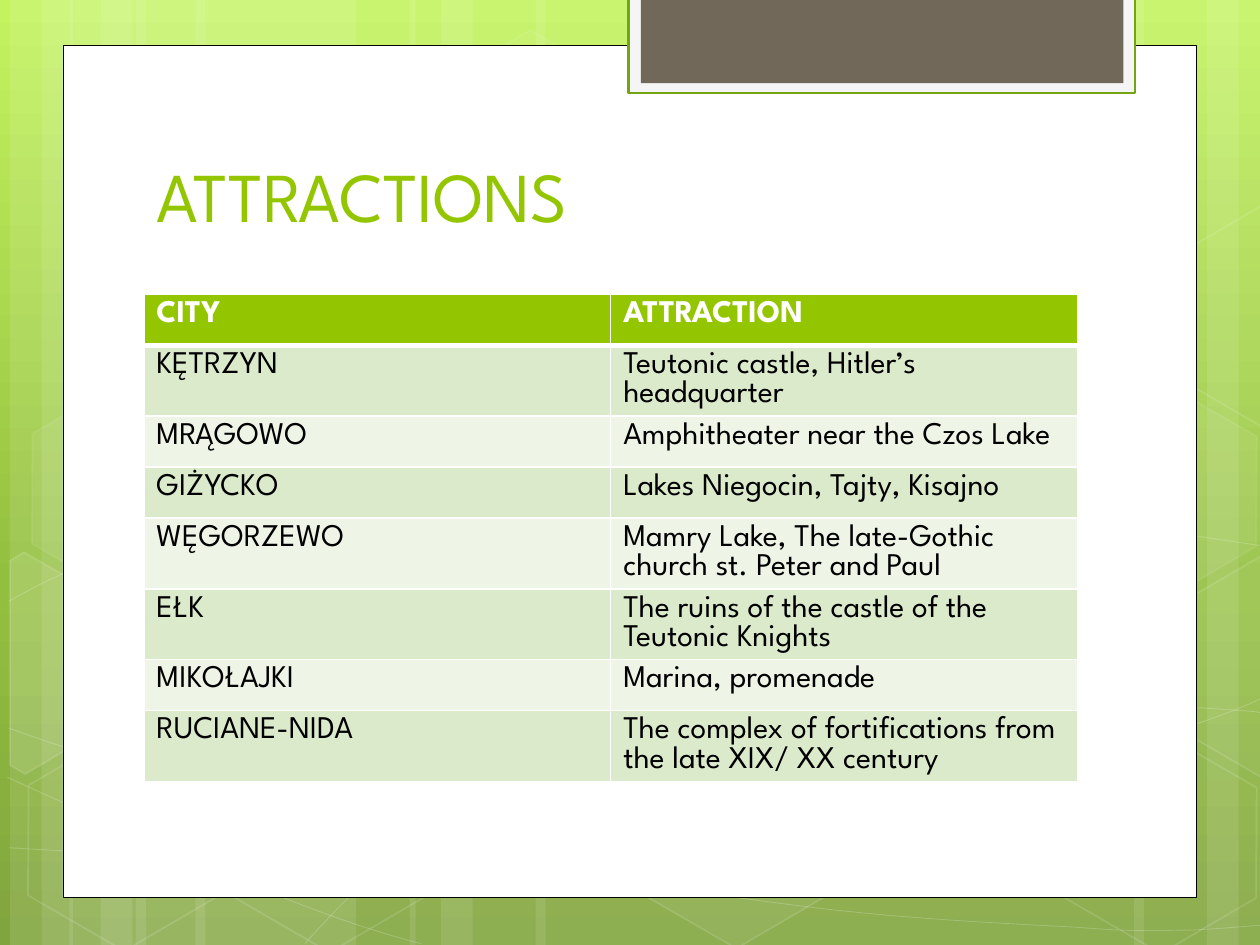
from copy import deepcopy
from math import cos, radians, sin
from typing import NamedTuple

from pptx import Presentation
from pptx.dml.color import RGBColor as RGB
from pptx.enum.shapes import MSO_SHAPE as Shape
from pptx.enum.text import MSO_ANCHOR as Anchor, MSO_AUTO_SIZE as Fit, PP_ALIGN as Align
from pptx.oxml.ns import qn
from pptx.util import Cm, Pt

FONT = "League Spartan"
WHITE, BLACK, GREEN = "FFFFFF", "000000", "94C600"
TILT = 30


class Curve(NamedTuple):
    """A start, then three points for each Bezier piece; one piece may be a line."""
    knots: list
    straight: int = -1


class Hex(NamedTuple):
    x: float
    y: float
    fill: int
    line: int


class Shard(NamedTuple):
    """A tilted hexagon cut off by the slide edge."""
    mid: tuple
    points: list
    fill: int


# Left and width of the pale stripes, in cm
STRIPES = [(2.74, 4.44), (0.2, 1.27), (0.84, 2.11), (3.94, 4.44), (1.4, 1.27), (2.03, 2.11),
           (18.62, 4.44), (24.33, 1.27), (22.86, 2.11),
           (10.8, 7.82), (8.26, 1.27), (8.89, 2.11)]

CURVES = [
    Curve([(0.18, 17.09), (1.55, 17.17), (2.92, 17.25), (4.83, 17.22),
           (6.73, 17.2), (9.09, 17.15), (11.63, 16.89), (14.17, 16.64), (17.78, 16.15),
           (20.12, 15.67), (22.43, 15.19), (24.82, 14.43), (25.58, 14)]),
    Curve([(0.18, 12.12), (0.91, 11.71), (1.65, 11.33), (3.07, 10.95),
           (4.52, 10.57), (6.58, 10.01), (8.81, 9.83), (11.07, 9.65), (13.82, 9.63),
           (16.61, 9.83), (19.41, 10.03), (24.05, 10.82), (25.58, 11.02)]),
    Curve([(0.15, 15.67), (3.23, 17.07), (6.27, 18.47), (8.48, 19.02)]),
    Curve([(0.18, 14.68), (0.97, 14.96), (1.78, 15.24), (3.25, 15.65),
           (4.72, 16.03), (6.93, 16.66), (9.07, 17.09), (11.18, 17.53), (13.84, 17.98),
           (15.95, 18.24), (18.06, 18.52), (20.32, 18.62), (21.67, 18.69), (22.99, 18.8),
           (23.34, 18.75), (24, 18.75), (24.66, 18.72), (25.12, 18.67), (25.58, 18.64)]),
    Curve([(6.15, 19.02), (6.6, 18.52), (7.06, 18.01), (7.67, 17.55),
           (8.28, 17.09), (9.14, 16.59), (9.86, 16.23), (10.57, 15.88), (11, 15.72),
           (11.94, 15.47), (12.85, 15.21), (14.55, 14.86), (15.44, 14.68), (16.36, 14.5),
           (16.48, 14.5), (17.27, 14.45), (18.06, 14.38), (19.3, 14.3), (20.17, 14.27),
           (21.06, 14.25), (22.5, 14.27), (22.5, 14.27), (24.21, 14.27),
           (24.66, 14.3), (25.1, 14.33), (25.32, 14.35), (25.48, 14.38), (25.4, 14.35),
           (25.55, 14.38)], straight=7),
]

HEXES = [Hex(8.48, 0.91, 4, 8), Hex(12.62, 14.96, 6, 12), Hex(0.28, 15.01, 0, 12),
         Hex(0.36, 7.92, 7, 8), Hex(4.42, 15.04, 0, 12), Hex(19.13, 11.51, 10, 12),
         Hex(21.18, 15.06, 0, 12), Hex(21.18, 7.98, 7, 8)]

SHARDS = [
    Shard((0.91, 13.59), [(0.2, 11.3), (0.48, 11.13), (2.44, 12.24), (2.41, 14.48),
                          (0.51, 15.6), (0.2, 15.42)], 10),
    Shard((25.02, 13.21), [(23.52, 12.32), (25.43, 11.2), (25.63, 11.33), (25.63, 15.57),
                           (25.45, 15.67), (23.52, 14.55)], 4),
    Shard((25.02, 6.12), [(23.52, 5.26), (25.43, 4.14), (25.65, 4.27), (25.63, 8.51),
                          (25.45, 8.61), (23.52, 7.49)], 0),
]

ROWS = [
    ("CITY", "ATTRACTION"),
    ("KĘTRZYN", "Teutonic castle, Hitler’s headquarter"),
    ("MRĄGOWO", "Amphitheater near the Czos Lake"),
    ("GIŻYCKO", "Lakes Niegocin, Tajty, Kisajno"),
    ("WĘGORZEWO", "Mamry Lake, The late-Gothic church st. Peter and Paul"),
    ("EŁK", "The ruins of the castle of the Teutonic Knights"),
    ("MIKOŁAJKI", "Marina, promenade"),
    ("RUCIANE-NIDA", "The complex of fortifications from the late XIX/ XX century"),
]


def paint(fill, color: str, alpha: int = 100) -> None:
    """Fill with a colour; alpha is in percent and 0 means no fill."""
    if not alpha:
        fill.background()
        return
    fill.solid()
    fill.fore_color.rgb = RGB.from_string(color)
    if alpha < 100:
        tone = fill._xPr.find(qn("a:solidFill"))[0]
        tone.append(tone.makeelement(qn("a:alpha"), {"val": str(alpha * 1000)}))


def style(shape, fill=WHITE, alpha=100, line=WHITE, width=0.0, glow=100) -> None:
    """Set fill and outline; glow is the opacity of the line."""
    shape.shadow.inherit = False
    paint(shape.fill, fill, alpha)
    paint(shape.line.fill, line, glow if width else 0)
    if width:
        shape.line.width = Pt(width)


def add_box(slide, x, y, w, h, kind=Shape.RECTANGLE, **look):
    box = slide.shapes.add_shape(kind, Cm(x), Cm(y), Cm(w), Cm(h))
    style(box, **look)
    return box


def add_path(slide, points: list, close: bool, **look):
    spots = [(Cm(x), Cm(y)) for x, y in points]
    pen = slide.shapes.build_freeform(*spots[0])
    pen.add_line_segments(spots[1:], close=close)
    shape = pen.convert_to_shape()
    style(shape, **look)
    return shape


def add_curve(slide, curve: Curve) -> None:
    shape = add_path(slide, curve.knots, False, alpha=0, width=0.5, glow=20)
    legs = list(shape._element.iter(qn("a:lnTo")))
    piece = 0
    while legs:
        size = 1 if piece == curve.straight else 3
        group, legs = legs[:size], legs[size:]
        if size == 3:
            bend = group[0].makeelement(qn("a:cubicBezTo"))
            group[0].addprevious(bend)
            for leg in group:
                bend.append(leg[0])
                leg.getparent().remove(leg)
        piece += 1


def add_shard(slide, shard: Shard) -> None:
    """Turn the points back about the middle, then tilt the shape."""
    turn, (mx, my) = radians(-TILT), shard.mid
    flat = [(mx + (x - mx) * cos(turn) - (y - my) * sin(turn),
             my + (x - mx) * sin(turn) + (y - my) * cos(turn)) for x, y in shard.points]
    add_path(slide, flat, True, alpha=shard.fill, width=1, glow=12).rotation = TILT


def write(frame, text: str, size=18, color=BLACK, bold=False) -> None:
    frame.text = text
    para = frame.paragraphs[0]
    para.alignment = Align.LEFT
    font = para.runs[0].font
    font.name, font.size, font.bold = FONT, Pt(size), bold
    font.color.rgb = RGB.from_string(color)


def edge(cell, side: str, width: float) -> None:
    """Draw a white border on one side: L, R, T or B."""
    props = cell._tc.get_or_add_tcPr()
    line = props.makeelement(qn(f"a:ln{side}"), {"w": str(Pt(width))})
    solid = line.makeelement(qn("a:solidFill"))
    solid.append(solid.makeelement(qn("a:srgbClr"), {"val": WHITE}))
    line.append(solid)
    props.insert("LRTB".index(side), line)


def add_grid(slide) -> None:
    height = 1.03
    grid = slide.shapes.add_table(len(ROWS), 2, Cm(2.9), Cm(5.93), Cm(18.82),
                                  Cm(height * len(ROWS))).table
    for r, row in enumerate(ROWS):
        grid.rows[r].height = Cm(height)
        head = r == 0
        for c, text in enumerate(row):
            cell = grid.cell(r, c)
            write(cell.text_frame, text, color=WHITE if head else BLACK, bold=head)
            paint(cell.fill, GREEN if head else ("EEF5E7", "DCEACC")[r % 2])
            for side in "LRTB":
                thick = (r, side) in ((0, "B"), (1, "T"))
                edge(cell, side, 3 if thick else 1)


def add_back(slide) -> None:
    fill = slide.background.fill
    fill.gradient()
    fill.gradient_angle = 270
    stops = slide._element.find(".//" + qn("a:gsLst"))
    stops.append(deepcopy(stops[0]))
    tones = [(0, "C3F35F"), (0.62, "93BF3F"), (1, "81A53E")]
    for stop, (place, color) in zip(fill.gradient_stops, tones):
        stop.position = place
        stop.color.rgb = RGB.from_string(color)
    for x, w in STRIPES:
        add_box(slide, x, 0, w, 19.05, alpha=10)
    for curve in CURVES:
        add_curve(slide, curve)
    for x, y, tint, line in HEXES:
        tile = add_box(slide, x, y, 4.44, 3.86, Shape.HEXAGON, alpha=tint, width=1, glow=line)
        tile.adjustments[0], tile.adjustments[1] = 0.285, 1.155
        tile.rotation = TILT
    for shard in SHARDS:
        add_shard(slide, shard)


def main() -> None:
    deck = Presentation()
    deck.slide_width, deck.slide_height = Cm(25.4), Cm(19.05)
    slide = deck.slides.add_slide(deck.slide_layouts[5])
    add_back(slide)
    add_box(slide, 1.27, 0.91, 22.86, 17.19, line=BLACK, width=0.5)
    add_box(slide, 12.67, -0.05, 10.21, 1.93, fill="F5F5F5", line="74A510", width=1.25)
    add_box(slide, 12.92, -0.05, 9.73, 1.73, fill="71685A")

    title = slide.shapes.title
    title.left, title.top, title.width, title.height = Cm(2.9), Cm(1.72), Cm(19.51), Cm(3.18)
    write(title.text_frame, "ATTRACTIONS", size=40, color=GREEN)
    title.text_frame.vertical_anchor = Anchor.BOTTOM
    title.text_frame.auto_size = Fit.NONE
    slide.shapes._spTree.append(title._element)  # bring to front
    add_grid(slide)
    deck.save("out.pptx")


if __name__ == "__main__":
    main()
